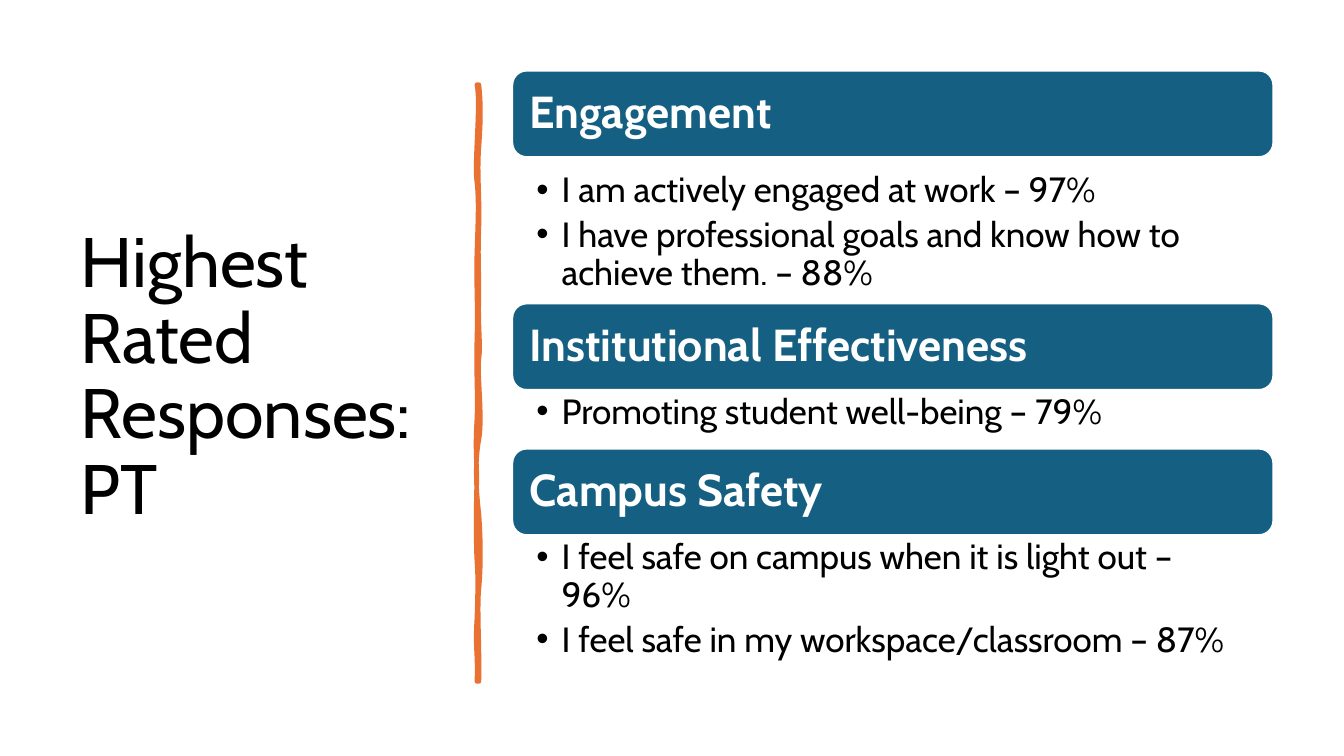
"""Build the slide of highest rated part-time survey responses."""
from itertools import chain

from lxml.etree import SubElement
from pptx import Presentation
from pptx.dml.color import RGBColor
from pptx.enum.shapes import MSO_SHAPE as Shape
from pptx.enum.text import MSO_ANCHOR as Anchor, MSO_AUTO_SIZE as AutoSize, PP_ALIGN as Align
from pptx.oxml.ns import qn
from pptx.util import Pt

TITLE = "Highest Rated Responses: PT"
SECTIONS = [
    ("Engagement", 11, 134, [
        "I am actively engaged at work – 97%",
        "I have professional goals and know how to achieve them. – 88%",
    ]),
    ("Institutional Effectiveness", 0, 58, ["Promoting student well-being – 79%"]),
    ("Campus Safety", 0, 134, [
        "I feel safe on campus when it is light out – 96%",
        "I feel safe in my workspace/classroom – 87%",
    ]),
]
DIVIDER_START = (475, 84)
DIVIDER_CURVES = [
    [(477, 102), (477, 119), (475, 146)],
    [(473, 173), (476, 195), (475, 226)],
    [(474, 257), (475, 262), (475, 294)],
    [(474, 325), (477, 342), (475, 356)],
    [(473, 370), (479, 414), (475, 436)],
    [(471, 457), (472, 484), (475, 510)],
    [(477, 536), (477, 564), (475, 584)],
    [(473, 603), (476, 650), (475, 676)],
    [(474, 676), (473, 676), (473, 676)],
    [(474, 646), (471, 644), (473, 613)],
    [(474, 583), (474, 570), (473, 557)],
    [(472, 544), (472, 495), (473, 477)],
    [(473, 459), (471, 445), (473, 415)],
    [(474, 386), (472, 373), (473, 335)],
    [(474, 298), (472, 281), (473, 250)],
    [(474, 218), (475, 200), (473, 181)],
    [(470, 163), (477, 104), (473, 84)],
    [(474, 84), (474, 84), (475, 84)],
]
COLORS = {"text": "000000", "header": "156082", "white": "FFFFFF", "divider": "E97132"}
FONT = "Cabin"
PX = 9144
LEFT, TOP, WIDTH, HEADER_HEIGHT = 508, 70, 755, 86


def color(name):
    return RGBColor.from_string(COLORS[name])


def box_of(*lengths):
    return [length * PX for length in lengths]


def prepare(frame, anchor, insets):
    frame.word_wrap = True
    frame.auto_size = AutoSize.NONE
    frame.vertical_anchor = anchor
    (frame.margin_left, frame.margin_top,
     frame.margin_right, frame.margin_bottom) = box_of(*insets)


def write(para, text, size, color_name, bold=False, after=0):
    para.alignment = Align.LEFT
    para.line_spacing = 0.9
    para.space_after = Pt(after)
    span = para.add_run()
    span.text = text
    span.font.name = FONT
    span.font.size = Pt(size)
    span.font.bold = bold
    span.font.color.rgb = color(color_name)


def add_bullet(para):
    properties = para._p.get_or_add_pPr()
    properties.set("marL", str(25 * PX))
    properties.set("indent", str(-25 * PX))
    SubElement(properties, qn("a:buFont")).set("typeface", "Arial")
    SubElement(properties, qn("a:buChar")).set("char", "•")


def paint(shape, fill, line, width):
    shape.shadow.inherit = False
    shape.fill.solid()
    shape.fill.fore_color.rgb = color(fill)
    shape.line.color.rgb = color(line)
    shape.line.width = Pt(width)


def bend_segments(shape):
    outline = next(shape._element.iter(qn("a:path")))
    segments = outline.findall(qn("a:lnTo"))
    close = outline.find(qn("a:close"))
    for first in range(0, len(segments), 3):
        curve = SubElement(outline, qn("a:cubicBezTo"))
        for segment in segments[first:first + 3]:
            curve.append(segment[0])
            outline.remove(segment)
    outline.append(close)


def add_divider(page):
    builder = page.shapes.build_freeform(*DIVIDER_START, scale=PX)
    builder.add_line_segments(chain.from_iterable(DIVIDER_CURVES), close=True)
    divider = builder.convert_to_shape()
    bend_segments(divider)
    paint(divider, "divider", "divider", 3.25)


def add_section(page, top, heading, gap, height, bullets):
    header = page.shapes.add_shape(
        Shape.ROUNDED_RECTANGLE, *box_of(LEFT, top, WIDTH, HEADER_HEIGHT))
    paint(header, "header", "white", 1.5)
    prepare(header.text_frame, Anchor.MIDDLE, (13, 13, 13, 13))
    write(header.text_frame.paragraphs[0], heading, 32, "white", bold=True)

    list_top = top + HEADER_HEIGHT + gap
    box = page.shapes.add_textbox(*box_of(LEFT, list_top, WIDTH, height))
    frame = box.text_frame
    prepare(frame, Anchor.TOP, (24, 4, 25, 4))
    for index, text in enumerate(bullets):
        para = frame.add_paragraph() if index else frame.paragraphs[0]
        write(para, text, 25, "text", after=5)
        add_bullet(para)
    return list_top + height


def main():
    deck = Presentation()
    deck.slide_width, deck.slide_height = box_of(1333, 750)
    page = deck.slides.add_slide(deck.slide_layouts[5])

    title = page.shapes.title
    title.left, title.top, title.width, title.height = box_of(70, 70, 374, 611)
    prepare(title.text_frame, Anchor.MIDDLE, (10, 5, 10, 5))
    write(title.text_frame.paragraphs[0], TITLE, 50, "text")

    add_divider(page)
    top = TOP
    for section in SECTIONS:
        top = add_section(page, top, *section)
    deck.save("out.pptx")


if __name__ == "__main__":
    main()
